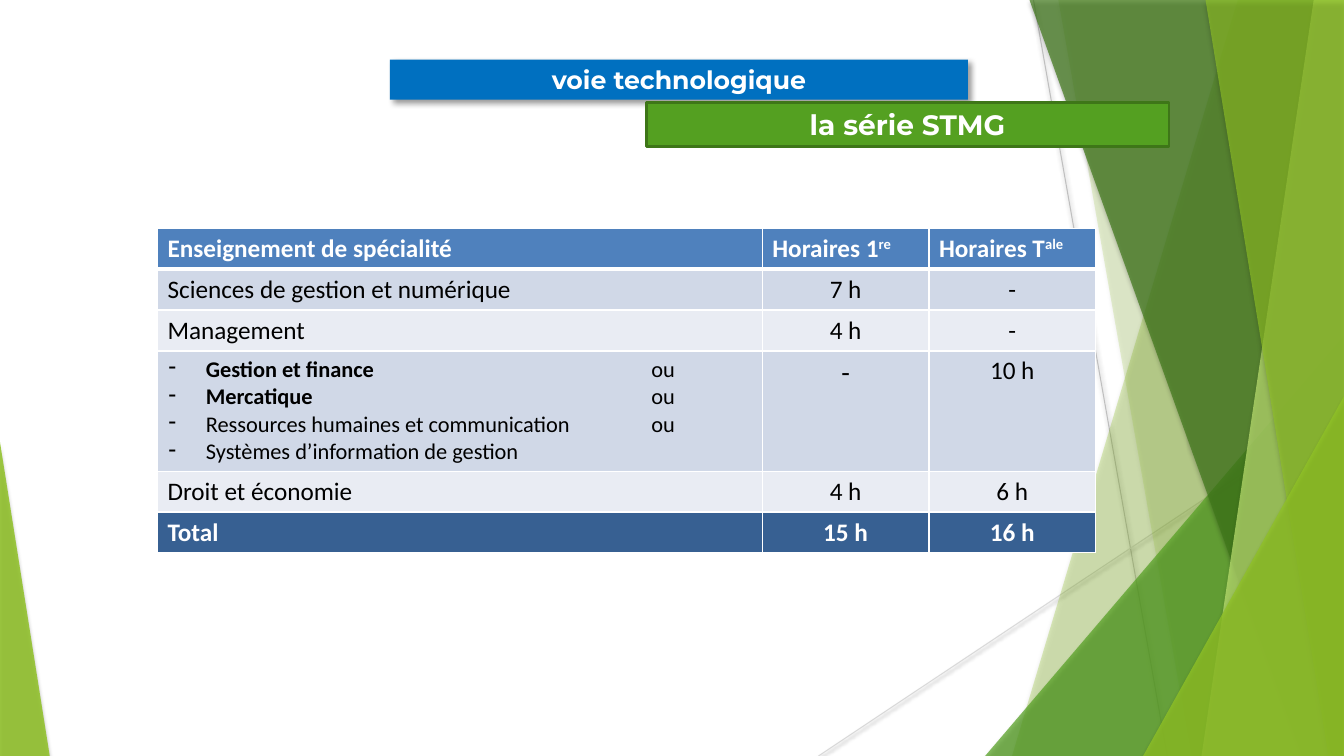
from pptx import Presentation
from pptx import util as u
from pptx.dml.color import RGBColor
from pptx.enum import shapes, text
from pptx.oxml.ns import qn
from lxml import etree

WIDE, HIGH = u.Inches(13.333), u.Inches(7.5)
LIME, GREEN, WHITE, BLACK = "90C226", "54A021", "FFFFFF", "000000"
PALE, LIGHT = "D0D8E7", "E9ECF3"
CAST = (35, 3, 2, 90)


def col(share):
    """Percent of the slide's width."""
    return round(WIDE * share / 100)


def row(share):
    """Percent of the slide's height."""
    return round(HIGH * share / 100)


def hue(code):
    return RGBColor.from_string(code)


def sub(parent, tag, **attrs):
    return etree.SubElement(parent, qn(tag), {k: str(v) for k, v in attrs.items()})


def shade(shape, cast=None):
    """Cast is opacity in percent, blur and distance in points, angle in degrees."""
    props = shape._element.spPr
    for old in props.findall(qn("a:effectLst")):
        props.remove(old)
    effect = sub(props, "a:effectLst")
    if cast:
        alpha, blur, dist, angle = cast
        outer = sub(effect, "a:outerShdw", blurRad=u.Pt(blur), dist=u.Pt(dist),
                    dir=angle * 60000, algn="tl", rotWithShape=0)
        sub(sub(outer, "a:srgbClr", val=BLACK), "a:alpha", val=alpha * 1000)


def paint(shape, color, alpha=100, edge=None, cast=None):
    shape.fill.solid()
    shape.fill.fore_color.rgb = hue(color)
    if alpha < 100:
        tone = shape._element.spPr.find(qn("a:solidFill"))[0]
        sub(tone, "a:alpha", val=alpha * 1000)
    if edge:
        shape.line.color.rgb = hue(edge)
        shape.line.width = u.Pt(2)
    else:
        shape.line.fill.background()
    shade(shape, cast)


def write(para, words, size=18, font="Calibri", color=BLACK, bold=False,
          center=False, raised=False):
    if center:
        para.alignment = text.PP_ALIGN.CENTER
    run = para.add_run()
    run.text = words
    run.font.size = u.Pt(size)
    run.font.name = font
    run.font.bold = bold
    run.font.color.rgb = hue(color)
    if raised:
        run._r.get_or_add_rPr().set("baseline", "30000")


def line(slide, start, end, color):
    link = slide.shapes.add_connector(
        shapes.MSO_CONNECTOR.STRAIGHT, col(start[0]), row(start[1]),
        col(end[0]), row(end[1]))
    link.line.color.rgb = hue(color)
    link.line.width = u.Pt(0.75)
    shade(link, (38, 3.1, 1.6, 90))


def pane(slide, top, base, color, alpha):
    """Full-height pane from a slanted left edge to the slide's right edge."""
    build = slide.shapes.build_freeform(col(top), 0)
    build.add_line_segments(
        [(WIDE, 0), (WIDE, HIGH), (col(base), HIGH)], close=True)
    paint(build.convert_to_shape(), color, alpha, cast=CAST)


def wedge(slide, left, top, width, apex, color, alpha):
    """Triangle that stands on the slide's bottom edge."""
    shape = slide.shapes.add_shape(
        shapes.MSO_SHAPE.ISOSCELES_TRIANGLE, col(left), row(top),
        col(width), HIGH - row(top))
    shape.adjustments[0] = apex
    paint(shape, color, alpha, cast=CAST)


def banner(slide, box, words, size, color, edge=None, cast=None):
    left, top, width, height = box
    shape = slide.shapes.add_shape(
        shapes.MSO_SHAPE.RECTANGLE, col(left), row(top), col(width), row(height))
    paint(shape, color, edge=edge, cast=cast)
    frame = shape.text_frame
    frame.word_wrap = True
    frame.vertical_anchor = text.MSO_ANCHOR.MIDDLE
    write(frame.paragraphs[0], words, size=size, font="Montserrat",
          color=WHITE, bold=True, center=True)


def dress(cell, fill, top=0.96, base=0.96):
    """Set a cell's white borders and its fill."""
    props = cell._tc.get_or_add_tcPr()
    for side, width in (("L", 0.96), ("R", 0.96), ("T", top), ("B", base)):
        edge = sub(props, "a:ln" + side, w=u.Pt(width))
        sub(sub(edge, "a:solidFill"), "a:srgbClr", val=WHITE)
    cell.fill.solid()
    cell.fill.fore_color.rgb = hue(fill)


def options(frame, items):
    """Dashed list whose "ou" is lined up by a tab stop."""
    for i, (words, bold, joint) in enumerate(items):
        para = frame.add_paragraph() if i else frame.paragraphs[0]
        props = para._p.get_or_add_pPr()
        props.set("marL", str(u.Inches(0.38)))
        props.set("indent", str(u.Inches(-0.37)))
        sub(props, "a:buChar", char="-")
        sub(sub(props, "a:tabLst"), "a:tab", pos=col(36), algn="l")
        write(para, words, size=16, bold=bold)
        if joint:
            write(para, "\t" + joint, size=16)


def hours(slide):
    rows = [
        ("4F81BD", "Enseignement de spécialité", ("Horaires 1", "re"), ("Horaires T", "ale")),
        (PALE, "Sciences de gestion et numérique", "7 h", "-"),
        (LIGHT, "Management", "4 h", "-"),
        (PALE, [("Gestion et finance", True, "ou"),
                ("Mercatique", True, "ou"),
                ("Ressources humaines et communication", False, "ou"),
                ("Systèmes d’information de gestion", False, "")], "-", "10 h"),
        (LIGHT, "Droit et économie", "4 h", "6 h"),
        ("376092", "Total", "15 h", "16 h"),
    ]
    widths, heights = (45, 12.4, 12.4), (5.4, 5.4, 5.4, 15.9, 5.4, 5.4)
    table = slide.shapes.add_table(
        len(heights), len(widths), col(11.72), row(30.2),
        col(sum(widths)), row(sum(heights))).table
    for part, width in zip(table.columns, widths):
        part.width = col(width)
    for part, height in zip(table.rows, heights):
        part.height = row(height)
    for r, (fill, *cells) in enumerate(rows):
        strong = r in (0, len(rows) - 1)
        look = {"bold": strong, "color": WHITE if strong else BLACK}
        for c, words in enumerate(cells):
            cell = table.cell(r, c)
            dress(cell, fill, top=3 if r == 1 else 0.96, base=3 if r == 0 else 0.96)
            para = cell.text_frame.paragraphs[0]
            if isinstance(words, list):
                options(cell.text_frame, words)
            elif isinstance(words, tuple):
                write(para, words[0], **look)
                write(para, words[1], raised=True, **look)
            else:
                size = 20 if (r, c) == (3, 1) else 18
                write(para, words, size=size, center=c > 0, **look)


def main():
    deck = Presentation()
    deck.slide_width, deck.slide_height = WIDE, HIGH
    slide = deck.slides.add_slide(deck.slide_layouts[6])
    line(slide, (76.9, 0), (86.85, 100), "BFBFBF")
    line(slide, (100, 53.7), (60.9, 100), "D9D9D9")
    pane(slide, 92.1, 75.3, LIME, 30)
    pane(slide, 78.75, 88.65, LIME, 20)
    wedge(slide, 73.3, 44.4, 26.7, 1, GREEN, 72)
    pane(slide, 76.6, 96.85, "3F7819", 70)
    pane(slide, 97.75, 89.4, "C0E474", 70)
    pane(slide, 89.7, 98.85, LIME, 65)
    wedge(slide, 85.05, 52.4, 14.95, 1, LIME, 80)
    wedge(slide, 0, 58.5, 3.7, 0, LIME, 85)
    banner(slide, (29.02, 7.9, 43, 5.3), "voie technologique", 18, "0070C0",
           cast=(40, 4, 3, 45))
    banner(slide, (48.08, 13.6, 38.9, 5.75), "la série STMG", 20, GREEN, edge="3E7618")
    hours(slide)
    deck.save("out.pptx")


if __name__ == "__main__":
    main()
